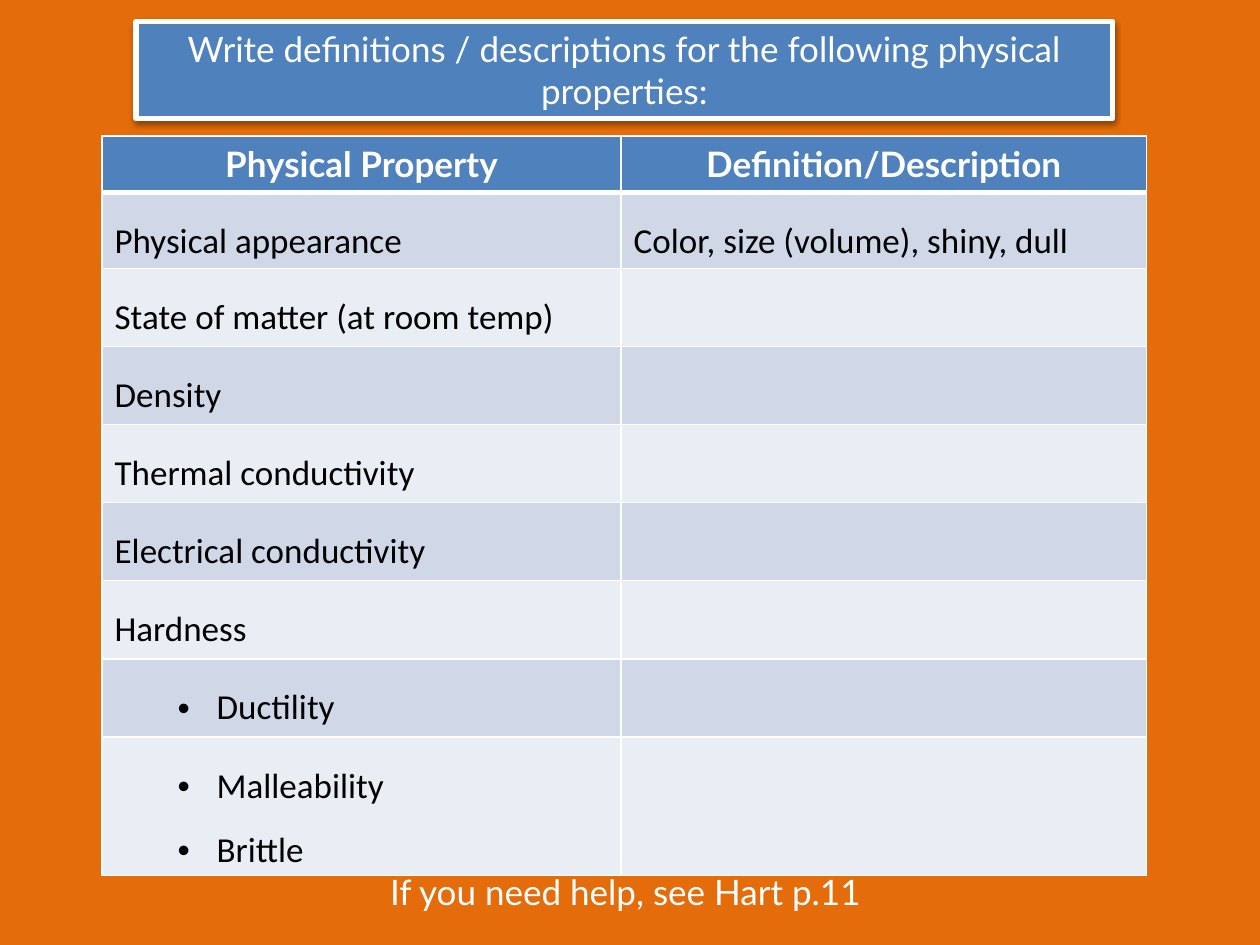
from lxml import etree
from pptx import Presentation
from pptx.dml.color import RGBColor
from pptx.enum import shapes, text
from pptx.oxml import ns
from pptx.util import Inches, Pt

TITLE = "Write definitions / descriptions for the following physical properties:"
HELP_NOTE = "If you need help, see Hart p.11"
HEADERS = ["Physical Property", "Definition/Description"]
# Each row: property lines, description, whether the lines are bulleted
PROPERTIES = [
    (["Physical appearance"], "Color, size (volume), shiny, dull", False),
    (["State of matter (at room temp)"], "", False),
    (["Density"], "", False),
    (["Thermal conductivity"], "", False),
    (["Electrical conductivity"], "", False),
    (["Hardness"], "", False),
    (["Ductility"], "", True),
    (["Malleability", "Brittle"], "", True),
]
COLUMN_WIDTHS = [4.12, 4.17]
ROW_HEIGHTS = [0.45, 0.56] + [0.62] * 7
ORANGE, BLUE, WHITE, BLACK = "E46C0A", "4F81BD", "FFFFFF", "000000"
BANDS = ["D0D8E8", "E9EDF4"]


def color(value):
    return RGBColor.from_string(value)


def paint(fill, value):
    fill.solid()
    fill.fore_color.rgb = color(value)


def add_element(parent, tag, **attributes):
    values = {name: str(value) for name, value in attributes.items()}
    return etree.SubElement(parent, ns.qn(tag), values)


def write(frame, lines, font="Lato", ink=WHITE, bold=False,
          align=text.PP_ALIGN.CENTER, spacing=None, bullet=False):
    for index, line in enumerate(lines):
        paragraph = frame.paragraphs[0] if index == 0 else frame.add_paragraph()
        paragraph.alignment = align
        paragraph.line_spacing = spacing
        if bullet:
            paragraph.level = 1
            properties = paragraph._p.get_or_add_pPr()
            properties.set("marL", str(Inches(0.81)))
            properties.set("indent", str(Inches(-0.31)))
            add_element(properties, "a:buFont", typeface="Arial")
            add_element(properties, "a:buChar", char="•")
        run = paragraph.add_run()
        run.text = line
        run.font.name = font
        run.font.size = Pt(20)
        run.font.bold = bold
        run.font.color.rgb = color(ink)


def fit_to_text(frame):
    frame.word_wrap = True
    frame.auto_size = text.MSO_AUTO_SIZE.SHAPE_TO_FIT_TEXT


def set_borders(cell, top, bottom):
    """Draw white cell borders; top and bottom are widths in points."""
    properties = cell._tc.get_or_add_tcPr()
    widths = {"a:lnL": 1, "a:lnR": 1, "a:lnT": top, "a:lnB": bottom}
    for position, (tag, width) in enumerate(widths.items()):
        line = add_element(properties, tag, w=Pt(width))
        add_element(add_element(line, "a:solidFill"), "a:srgbClr", val=WHITE)
        properties.insert(position, line)


def add_title(slide):
    title = slide.shapes.add_shape(shapes.MSO_SHAPE.RECTANGLE, Inches(1.08),
                                   Inches(0.17), Inches(7.75), Inches(0.77))
    paint(title.fill, BLUE)
    title.line.color.rgb = color(WHITE)
    title.line.width = Pt(3)
    title.shadow.inherit = False
    effects = title._element.spPr.find(ns.qn("a:effectLst"))
    shadow = add_element(effects, "a:outerShdw", blurRad=Pt(3.1), dist=Pt(1.6),
                         dir=90 * 60000, rotWithShape=0)
    shade = add_element(shadow, "a:srgbClr", val=BLACK)
    add_element(shade, "a:alpha", val=38000)
    fit_to_text(title.text_frame)
    write(title.text_frame, [TITLE])


def add_property_table(slide):
    table = slide.shapes.add_table(
        len(ROW_HEIGHTS), len(COLUMN_WIDTHS), Inches(0.81), Inches(1.08),
        Inches(sum(COLUMN_WIDTHS)), Inches(sum(ROW_HEIGHTS))).table
    for column, width in zip(table.columns, COLUMN_WIDTHS):
        column.width = Inches(width)
    for row, height in zip(table.rows, ROW_HEIGHTS):
        row.height = Inches(height)

    for column, header in enumerate(HEADERS):
        cell = table.cell(0, column)
        paint(cell.fill, BLUE)
        set_borders(cell, top=1, bottom=3)
        write(cell.text_frame, [header], bold=True)

    for row, (names, description, bullet) in enumerate(PROPERTIES, start=1):
        descriptions = [description] if description else []
        for column, lines in enumerate([names, descriptions]):
            cell = table.cell(row, column)
            paint(cell.fill, BANDS[(row - 1) % 2])
            set_borders(cell, top=3 if row == 1 else 1, bottom=1)
            write(cell.text_frame, lines, font="Calibri", ink=BLACK,
                  align=text.PP_ALIGN.LEFT, spacing=1.5,
                  bullet=bullet and column == 0)


def add_help_note(slide):
    note = slide.shapes.add_textbox(Inches(1.38), Inches(6.86),
                                    Inches(7.17), Inches(0.44))
    fit_to_text(note.text_frame)
    write(note.text_frame, [HELP_NOTE])


def main():
    presentation = Presentation()
    presentation.slide_width = Inches(10)
    presentation.slide_height = Inches(7.5)
    slide = presentation.slides.add_slide(presentation.slide_layouts[6])
    paint(slide.background.fill, ORANGE)
    add_title(slide)
    add_property_table(slide)
    add_help_note(slide)
    presentation.save("out.pptx")


if __name__ == "__main__":
    main()
